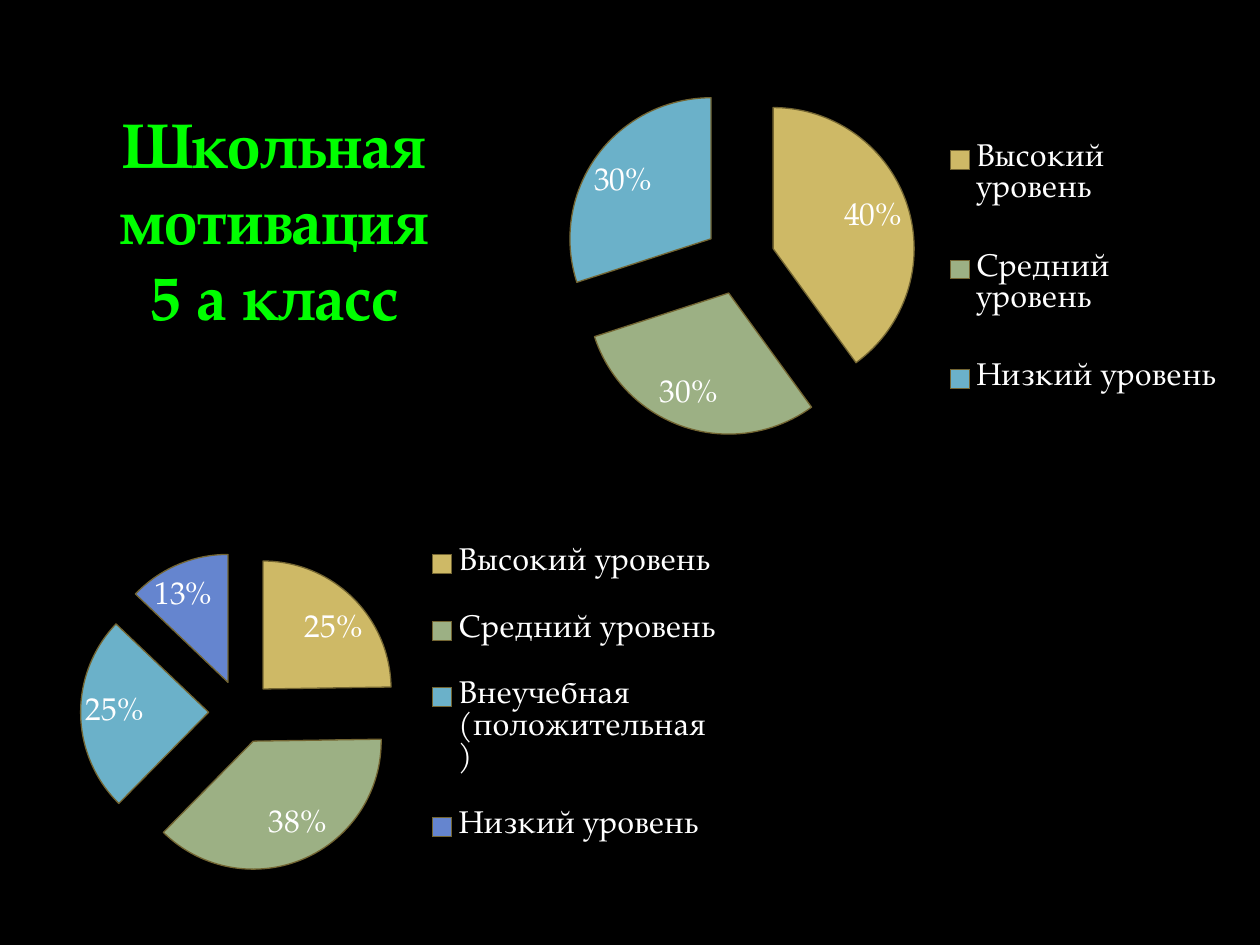
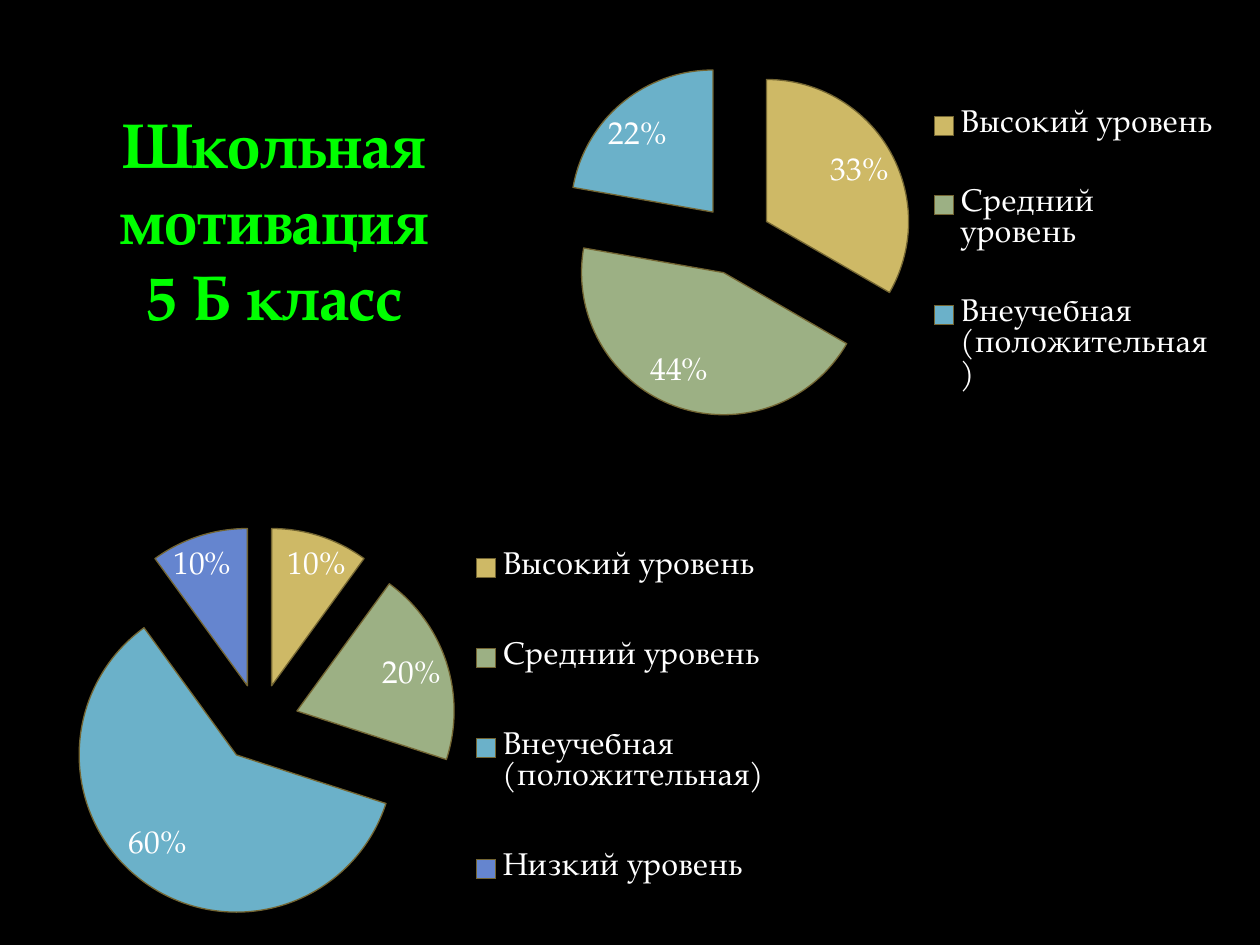
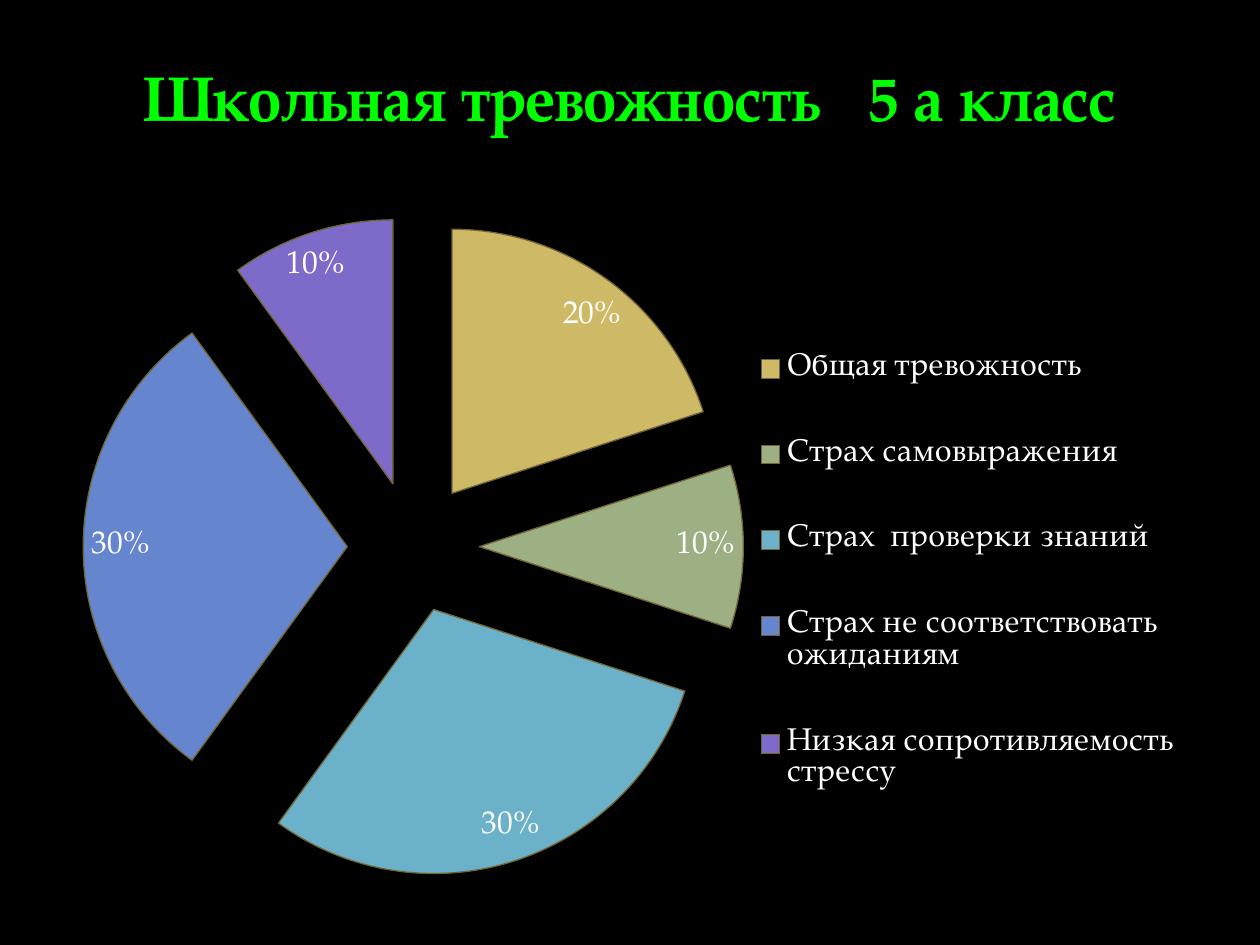
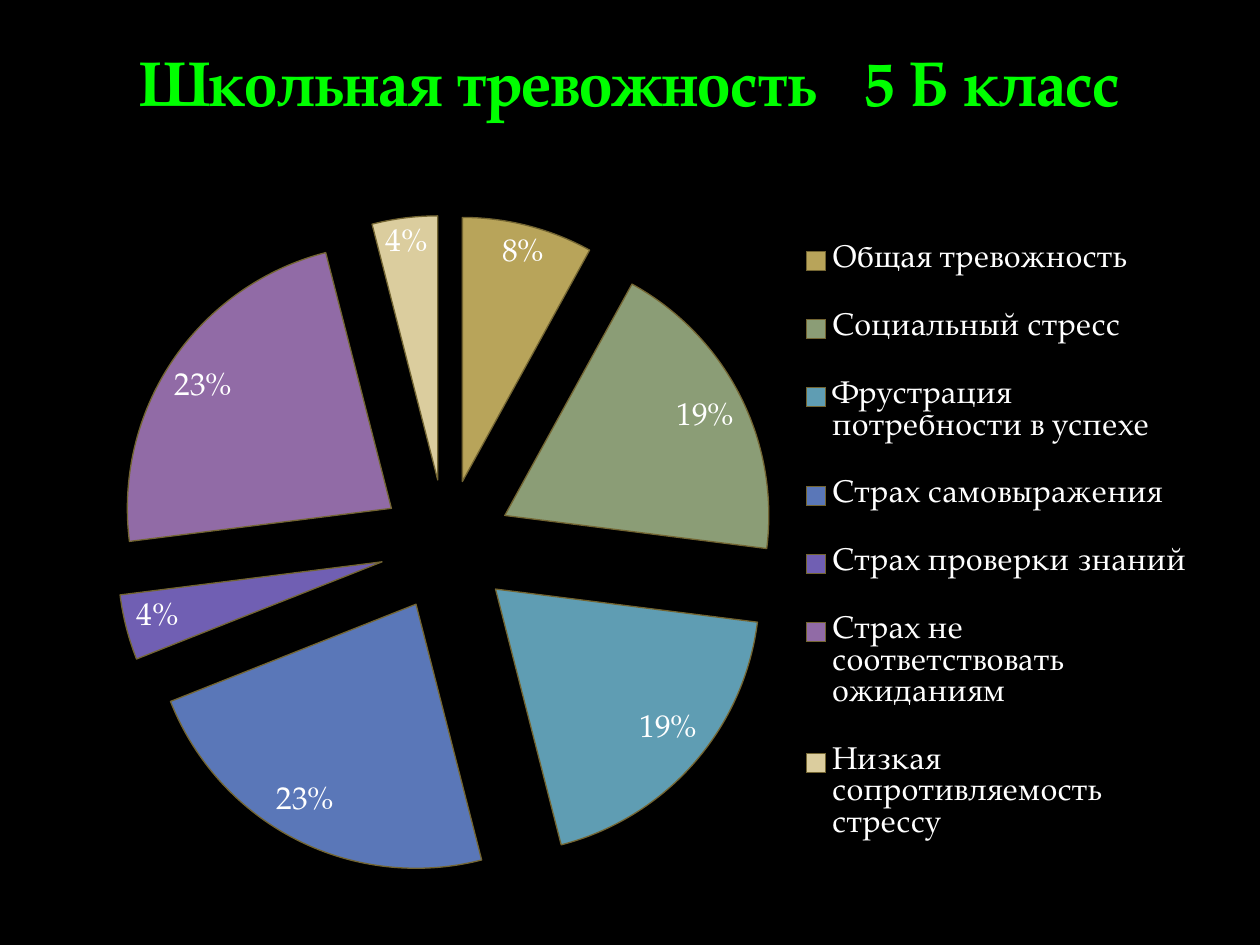
from lxml.etree import SubElement
from pptx import Presentation
from pptx.chart.data import CategoryChartData
from pptx.dml.color import RGBColor
from pptx.enum.chart import XL_CHART_TYPE as ChartType
from pptx.enum.chart import XL_LABEL_POSITION as LabelPosition
from pptx.enum.chart import XL_LEGEND_POSITION as LegendPosition
from pptx.enum.text import MSO_ANCHOR as Anchor
from pptx.enum.text import MSO_AUTO_SIZE as AutoSize
from pptx.enum.text import PP_ALIGN as Align
from pptx.oxml import parse_xml
from pptx.oxml.ns import nsdecls, qn
from pptx.util import Inches, Pt

FONT = "TeX Gyre Pagella"
BLACK = RGBColor(0x00, 0x00, 0x00)
WHITE = RGBColor(0xFF, 0xFF, 0xFF)
GREEN = RGBColor(0x00, 0xFF, 0x00)
OUTLINE = RGBColor(0x73, 0x65, 0x32)
SLICES = [
    RGBColor(0xCE, 0xB9, 0x66),
    RGBColor(0x9C, 0xB0, 0x84),
    RGBColor(0x6B, 0xB1, 0xC9),
    RGBColor(0x65, 0x85, 0xCF),
    RGBColor(0x7E, 0x6B, 0xC9),
]
DEEP_SLICES = [
    RGBColor(0xB8, 0xA4, 0x5A),
    RGBColor(0x8B, 0x9D, 0x76),
    RGBColor(0x5F, 0x9D, 0xB3),
    RGBColor(0x5A, 0x77, 0xB8),
    RGBColor(0x70, 0x5F, 0xB3),
    RGBColor(0x91, 0x6B, 0xA6),
    RGBColor(0xDB, 0xCD, 0x9E),
]
HIGH, MIDDLE, LOW = "Высокий уровень", "Средний уровень", "Низкий уровень"
EXTRACURRICULAR = "Внеучебная (положительная)"
SIDE_TITLE = (0.2, 0.36, 3.95, 2.76)


def write_text(shape, lines, size=36, color=GREEN, bold=True, align=Align.CENTER):
    frame = shape.text_frame
    frame.word_wrap = True
    frame.auto_size = AutoSize.NONE
    frame.vertical_anchor = Anchor.MIDDLE
    paragraph = frame.paragraphs[0]
    paragraph.alignment = align
    for index, line in enumerate(lines):
        if index:
            paragraph.add_line_break()
        run = paragraph.add_run()
        run.text = line
        run.font.name = FONT
        run.font.size = Pt(size)
        run.font.bold = bold
        run.font.color.rgb = color


def add_titled_slide(presentation, box, lines):
    slide = presentation.slides.add_slide(presentation.slide_layouts[5])
    title = slide.shapes.title
    title.left, title.top, title.width, title.height = map(Inches, box)
    write_text(title, lines)
    return slide


def manual_layout(box, area, inner=False):
    layout = parse_xml(f"<c:layout {nsdecls('c')}/>")
    manual = SubElement(layout, qn("c:manualLayout"))
    settings = [("layoutTarget", "inner")] if inner else []
    settings += [("xMode", "edge"), ("yMode", "edge")]
    shares = [length / box[2 + index % 2] for index, length in enumerate(area)]
    settings += [(key, f"{share:.4f}") for key, share in zip("xywh", shares)]
    for key, value in settings:
        SubElement(manual, qn(f"c:{key}")).set("val", value)
    return layout


def add_pie(slide, box, pie, legend, slices, colors=SLICES):
    data = CategoryChartData()
    data.categories = list(slices)
    data.add_series("Series 1", slices.values())
    frame = slide.shapes.add_chart(ChartType.PIE, *map(Inches, box), data)
    chart = frame.chart
    chart.has_title = False
    chart.font.name = FONT
    chart.font.size = Pt(18)
    chart.font.color.rgb = WHITE

    chart.has_legend = True
    chart.legend.position = LegendPosition.RIGHT
    chart.legend.include_in_layout = False
    legend_element = chart._chartSpace.find(".//" + qn("c:legend"))
    legend_element.find(qn("c:legendPos")).addnext(manual_layout(box, legend))

    plot_area = chart._chartSpace.find(".//" + qn("c:plotArea"))
    for layout in plot_area.findall(qn("c:layout")):
        plot_area.remove(layout)
    left, top, diameter = pie
    square = (left, top, diameter, diameter)
    plot_area.insert(0, manual_layout(box, square, inner=True))

    plot = chart.plots[0]
    plot.vary_by_categories = True
    series = plot.series[0]
    explosion = parse_xml(f'<c:explosion {nsdecls("c")} val="25"/>')
    series._element.find(qn("c:tx")).addnext(explosion)
    for index, color in enumerate(colors[:len(slices)]):
        slice_format = series.points[index].format
        slice_format.fill.solid()
        slice_format.fill.fore_color.rgb = color
        slice_format.line.color.rgb = OUTLINE
        slice_format.line.width = Pt(0.75)

    labels = series.data_labels
    labels.show_value = False
    labels.show_percentage = True
    labels.number_format = "0%"
    labels.number_format_is_linked = False
    labels.position = LabelPosition.BEST_FIT


def add_motivation_slide(presentation, group, upper, lower):
    lines = ["Школьная мотивация", f"5 {group} класс"]
    slide = add_titled_slide(presentation, SIDE_TITLE, lines)
    add_pie(slide, **upper)
    add_pie(slide, **lower)


def add_anxiety_slide(presentation, group, title_height, **chart):
    box = (0.5, 0.3, 9, title_height)
    slide = add_titled_slide(presentation, box, [f"Школьная тревожность   5 {group} класс"])
    add_pie(slide, **chart)


def main():
    presentation = Presentation()
    presentation.slide_width, presentation.slide_height = Inches(10), Inches(7.5)
    background = presentation.slide_master.background.fill
    background.solid()
    background.fore_color.rgb = BLACK

    add_motivation_slide(
        presentation, "а",
        upper=dict(
            box=(4.29, 0.52, 5.51, 3.07),
            pie=(0.18, 0.14, 2.8),
            legend=(3.23, 0.25, 2.16, 2.74),
            slices={HIGH: 40, MIDDLE: 30, LOW: 30},
        ),
        lower=dict(
            box=(0.35, 3.99, 5.51, 3.07),
            pie=(0.29, 0.39, 2.54),
            legend=(3.08, 0.08, 2.26, 2.9),
            slices={HIGH: 25, MIDDLE: 38, EXTRACURRICULAR: 25, LOW: 13},
        ),
    )
    add_motivation_slide(
        presentation, "Б",
        upper=dict(
            box=(4.29, 0.21, 5.51, 3.39),
            pie=(0.14, 0.28, 2.82),
            legend=(3.15, 0.29, 2.21, 3),
            slices={HIGH: 33, MIDDLE: 44, EXTRACURRICULAR: 22},
        ),
        lower=dict(
            box=(0.35, 3.72, 5.98, 3.78),
            pie=(0.15, 0.46, 3.12),
            legend=(3.3, 0.2, 2.55, 3.57),
            slices={HIGH: 10, MIDDLE: 20, EXTRACURRICULAR: 60, LOW: 10},
        ),
    )
    add_anxiety_slide(
        presentation, "а", 0.93,
        box=(0.51, 1.23, 9.06, 5.98),
        pie=(0.15, 0.49, 5.24),
        legend=(5.41, 1.14, 3.52, 4.34),
        slices={
            "Общая тревожность": 20,
            "Страх самовыражения": 10,
            "Страх  проверки знаний": 30,
            "Страх не соответствовать ожиданиям": 30,
            "Низкая сопротивляемость стрессу": 10,
        },
    )
    add_anxiety_slide(
        presentation, "Б", 0.69,
        box=(0.43, 1.15, 9.13, 6.06),
        pie=(0.49, 0.56, 5.24),
        legend=(5.94, 0.51, 3.08, 5.31),
        slices={
            "Общая тревожность": 8,
            "Социальный стресс": 19,
            "Фрустрация потребности в успехе": 19,
            "Страх самовыражения": 23,
            "Страх проверки знаний": 4,
            "Страх не соответствовать ожиданиям": 23,
            "Низкая сопротивляемость стрессу": 4,
        },
        colors=DEEP_SLICES,
    )
    presentation.save("out.pptx")


if __name__ == "__main__":
    main()
